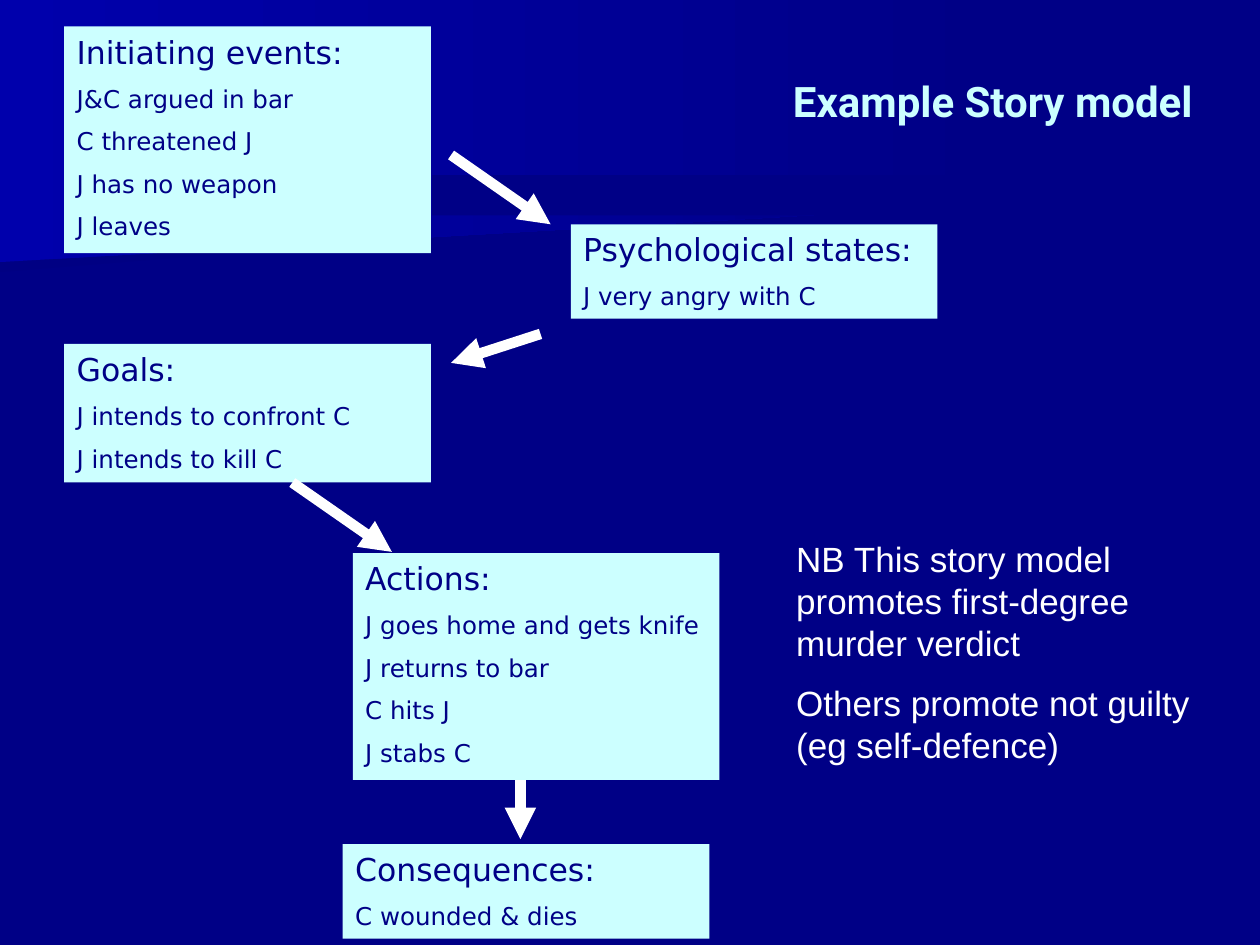
from lxml.etree import SubElement
from pptx import Presentation
from pptx.dml.color import RGBColor
from pptx.enum.shapes import MSO_CONNECTOR, MSO_SHAPE
from pptx.enum.text import MSO_ANCHOR, PP_ALIGN
from pptx.oxml.ns import qn
from pptx.util import Inches, Pt

NAVY, PALE, WHITE = "000086", "CCFFFF", "FFFFFF"
COLS, ROWS = 100, 75
WIDE = 29.1  # columns in each story box

deck = Presentation()
deck.slide_width, deck.slide_height = Inches(10), Inches(7.5)
slide = deck.slides.add_slide(deck.slide_layouts[6])
shapes = slide.shapes


def rgb(code):
    return RGBColor.from_string(code)


def grid(*cells):
    """Turn alternating columns and rows into slide lengths."""
    units = deck.slide_width / COLS, deck.slide_height / ROWS
    return [round(n * units[i % 2]) for i, n in enumerate(cells)]


def paint(shape, color):
    shape.shadow.inherit = False
    shape.fill.solid()
    shape.fill.fore_color.rgb = rgb(color)
    shape.line.fill.background()


def write(frame, lines, font, color, gap):
    """Fill a frame with (text, size) lines, spaced by gap points."""
    frame.word_wrap = True
    for i, (text, size) in enumerate(lines):
        para = frame.paragraphs[0] if i == 0 else frame.add_paragraph()
        para.text = text
        para.alignment = PP_ALIGN.LEFT
        para.space_before = Pt(gap)
        para.font.name, para.font.size = font, Pt(size)
        para.font.color.rgb = rgb(color)


def sweep(box, points, start):
    """Draw a background band; points are shares of its box."""
    x, y, w, h = grid(*box)
    spots = [(round(x + w * u), round(y + h * v)) for u, v in points]
    form = shapes.build_freeform(*spots[0])
    form.add_line_segments(spots[1:], close=True)
    band = form.convert_to_shape()
    paint(band, NAVY)
    band.fill.gradient()
    band.fill.gradient_angle = 0
    for stop, color, place in zip(band.fill.gradient_stops, (start, NAVY), (0, 1)):
        stop.color.rgb = rgb(color)
        stop.position = place


def title(box, text):
    frame = shapes.add_textbox(*grid(*box)).text_frame
    write(frame, [(text, 24)], "Roboto", PALE, 0)
    frame.vertical_anchor = MSO_ANCHOR.BOTTOM
    frame.paragraphs[0].alignment = PP_ALIGN.CENTER
    frame.paragraphs[0].font.bold = True


def note(box, lines):
    frame = shapes.add_textbox(*grid(*box)).text_frame
    write(frame, [(line, 20) for line in lines], "Arial", WHITE, 10)


def panel(box, color):
    rect = shapes.add_shape(MSO_SHAPE.RECTANGLE, *grid(*box))
    paint(rect, color)
    return rect


def story(box, head, facts):
    frame = panel(box, PALE).text_frame
    frame.vertical_anchor = MSO_ANCHOR.TOP
    lines = [(head, 18)] + [(fact, 14) for fact in facts]
    write(frame, lines, "DejaVu Sans", NAVY, 7.5)


def arrow(*ends):
    link = shapes.add_connector(MSO_CONNECTOR.STRAIGHT, *grid(*ends))
    link.line.color.rgb = rgb(WHITE)
    link.line.width = Pt(6)
    SubElement(link.line._get_or_add_ln(), qn("a:tailEnd"), type="triangle")
    SubElement(link._element.spPr, qn("a:effectLst"))


def main():
    slide.background.fill.solid()
    slide.background.fill.fore_color.rgb = rgb(NAVY)
    sweep((0, 10.1, 77.9, 11.5), [(1, 0.45), (0, 1), (0, 0), (1, 0)], "000083")
    sweep((0, 0, 79.2, 20.8), [(1, 0.78), (0, 1), (0, 0), (1, 0)], "0000AC")
    title((61.8, 6, 34, 4.5), "Example Story model")
    note((62.2, 42.2, 35.1, 19.3), [
        "NB This story model promotes first-degree murder verdict",
        "Others promote not guilty (eg self-defence)"])

    story((5.1, 2.1, WIDE, 18), "Initiating events:", [
        "J&C argued in bar", "C threatened J", "J has no weapon", "J leaves"])
    panel((34.3, 13.9, 62.2, 3.2), NAVY)
    story((45.3, 17.8, WIDE, 7.5), "Psychological states:", ["J very angry with C"])
    story((5.1, 27.3, WIDE, 11), "Goals:", [
        "J intends to confront C", "J intends to kill C"])
    story((28, 43.9, WIDE, 18), "Actions:", [
        "J goes home and gets knife", "J returns to bar", "C hits J", "J stabs C"])
    story((27.2, 67, WIDE, 7.5), "Consequences:", ["C wounded & dies"])

    for ends in [(35.8, 12.3, 43.7, 17.8), (42.9, 26.5, 35.8, 28.8),
                 (23.2, 38.3, 31.1, 43.8), (41.3, 61.9, 41.3, 66.6)]:
        arrow(*ends)
    deck.save("out.pptx")


if __name__ == "__main__":
    main()
